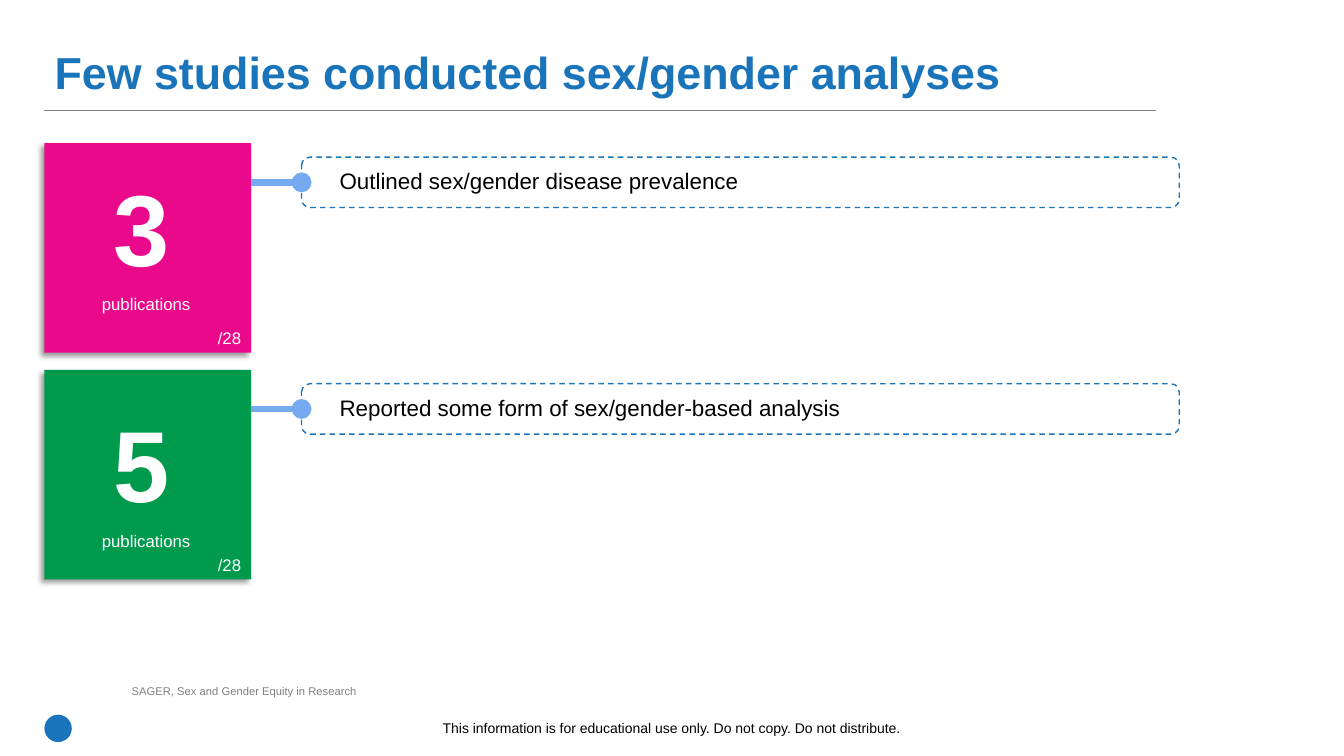
from dataclasses import dataclass

from lxml import etree
from pptx import Presentation
from pptx.dml.color import RGBColor
from pptx.enum.dml import MSO_LINE
from pptx.enum.shapes import MSO_CONNECTOR, MSO_SHAPE
from pptx.enum.text import MSO_ANCHOR, PP_ALIGN
from pptx.oxml import parse_xml
from pptx.oxml.ns import nsdecls, qn
from pptx.util import Cm, Pt

RECTANGLE = MSO_SHAPE.RECTANGLE
ROUNDED = MSO_SHAPE.ROUNDED_RECTANGLE
OVAL = MSO_SHAPE.OVAL
STRAIGHT = MSO_CONNECTOR.STRAIGHT
DASH = MSO_LINE.DASH
MIDDLE = MSO_ANCHOR.MIDDLE
LEFT, CENTER = PP_ALIGN.LEFT, PP_ALIGN.CENTER

BLUE = RGBColor(0x1A, 0x74, 0xBA)
OUTLINE_BLUE = RGBColor(0x1B, 0x75, 0xBB)
LIGHT_BLUE = RGBColor(0x76, 0xAA, 0xF0)
PINK = RGBColor(0xEB, 0x09, 0x8B)
GREEN = RGBColor(0x00, 0x9A, 0x4D)
GRAY = RGBColor(0x80, 0x80, 0x80)
BLACK = RGBColor(0x00, 0x00, 0x00)
WHITE = RGBColor(0xFF, 0xFF, 0xFF)

FONT = "Arial"
MARGIN = 1.12
CARD_WIDTH, CARD_HEIGHT = 5.21, 5.28
FINDING_LEFT, FINDING_WIDTH, FINDING_HEIGHT = 7.6, 22.12, 1.27

SHADOW = (
    f'<a:effectLst {nsdecls("a")}>'
    '<a:outerShdw blurRad="50800" dist="38100" dir="8100000" algn="tr" rotWithShape="0">'
    '<a:srgbClr val="000000"><a:alpha val="40000"/></a:srgbClr>'
    "</a:outerShdw></a:effectLst>"
)


@dataclass
class Result:
    count: str
    finding: str
    color: RGBColor
    top: float
    count_drop: float
    label_drop: float


RESULTS = [
    Result("3", "Outlined sex/gender disease prevalence", PINK, 3.61, 0.43, 3.66),
    Result("5", "Reported some form of sex/gender-based analysis", GREEN, 9.32, 0.69, 3.94),
]


def write(frame, text: str, *, size: float, color: RGBColor, bold: bool = False,
          align=LEFT, spacing: float = 1.0) -> None:
    frame.word_wrap = True
    paragraph = frame.paragraphs[0]
    paragraph.text = text
    paragraph.alignment = align
    paragraph.line_spacing = spacing
    font = paragraph.runs[0].font
    font.name, font.size, font.bold = FONT, Pt(size), bold
    font.color.rgb = color


def add_text(slide, text: str, left: float, top: float, width: float, height: float,
             **style) -> None:
    box = slide.shapes.add_textbox(Cm(left), Cm(top), Cm(width), Cm(height))
    write(box.text_frame, text, **style)


def add_plain_shape(slide, kind, left: float, top: float, width: float, height: float):
    shape = slide.shapes.add_shape(kind, Cm(left), Cm(top), Cm(width), Cm(height))
    shape.shadow.inherit = False
    return shape


def add_filled(slide, kind, left: float, top: float, width: float, height: float,
               color: RGBColor):
    shape = add_plain_shape(slide, kind, left, top, width, height)
    shape.fill.solid()
    shape.fill.fore_color.rgb = color
    shape.line.fill.background()
    return shape


def add_line(slide, left: int, right: int, y: int, color: RGBColor, weight: float):
    line = slide.shapes.add_connector(STRAIGHT, left, y, right, y)
    line.line.color.rgb = color
    line.line.width = Pt(weight)
    etree.SubElement(line._element.spPr, qn("a:effectLst"))
    return line


def add_result(slide, result: Result) -> None:
    # Coloured card with its shadow
    card = add_filled(slide, RECTANGLE, MARGIN, result.top, CARD_WIDTH, CARD_HEIGHT,
                      result.color)
    properties = card._element.spPr
    properties.replace(properties.find(qn("a:effectLst")), parse_xml(SHADOW))

    # Dashed frame and its connector
    frame = add_plain_shape(slide, ROUNDED, FINDING_LEFT, result.top + 0.35,
                            FINDING_WIDTH, FINDING_HEIGHT)
    frame.fill.background()
    frame.line.color.rgb = OUTLINE_BLUE
    frame.line.width = Pt(1)
    frame.line.dash_style = DASH
    link = add_line(slide, card.left + card.width, frame.left,
                    frame.top + frame.height // 2, LIGHT_BLUE, 4.75)
    link.end_connect(frame, 1)
    etree.SubElement(link.line._get_or_add_ln(), qn("a:tailEnd"), type="oval")

    # Texts
    add_text(slide, result.count, 1.63, result.top + result.count_drop, 3.89, 3.33,
             size=72, color=WHITE, bold=True, align=CENTER)
    add_text(slide, "publications", 2.21, result.top + result.label_drop, 2.95, 0.76,
             size=12, color=WHITE, align=CENTER)
    add_text(slide, "/28", 5.05, result.top + 4.53, 1.47, 0.76,
             size=12, color=WHITE, align=CENTER)
    add_text(slide, result.finding, 8.31, result.top + 0.48, 20.27, 0.94,
             size=16, color=BLACK)


def main() -> None:
    deck = Presentation()
    deck.slide_width, deck.slide_height = Cm(33.87), Cm(19.05)
    slide = deck.slides.add_slide(deck.slide_layouts[5])

    # Title and rule
    title = slide.shapes.title
    title.left, title.top, title.width, title.height = Cm(MARGIN), Cm(0.53), Cm(28.09), Cm(2.72)
    title.text_frame.vertical_anchor = MIDDLE
    write(title.text_frame, "Few studies conducted sex/gender analyses",
          size=32, color=BLUE, bold=True, spacing=0.9)
    add_line(slide, Cm(MARGIN), Cm(29.13), Cm(2.77), GRAY, 0.5)

    # Results
    for result in RESULTS:
        add_result(slide, result)

    # Source and footer
    add_text(slide, "SAGER, Sex and Gender Equity in Research", 3.07, 17.12, 27.91, 0.61,
             size=8, color=GRAY)
    add_filled(slide, OVAL, MARGIN, 18.01, 0.69, 0.69, BLUE)
    add_text(slide, "This information is for educational use only. Do not copy. Do not distribute.",
             0.97, 18.01, 31.9, 1.02, size=10, color=BLACK, align=CENTER)

    deck.save("out.pptx")


if __name__ == "__main__":
    main()
